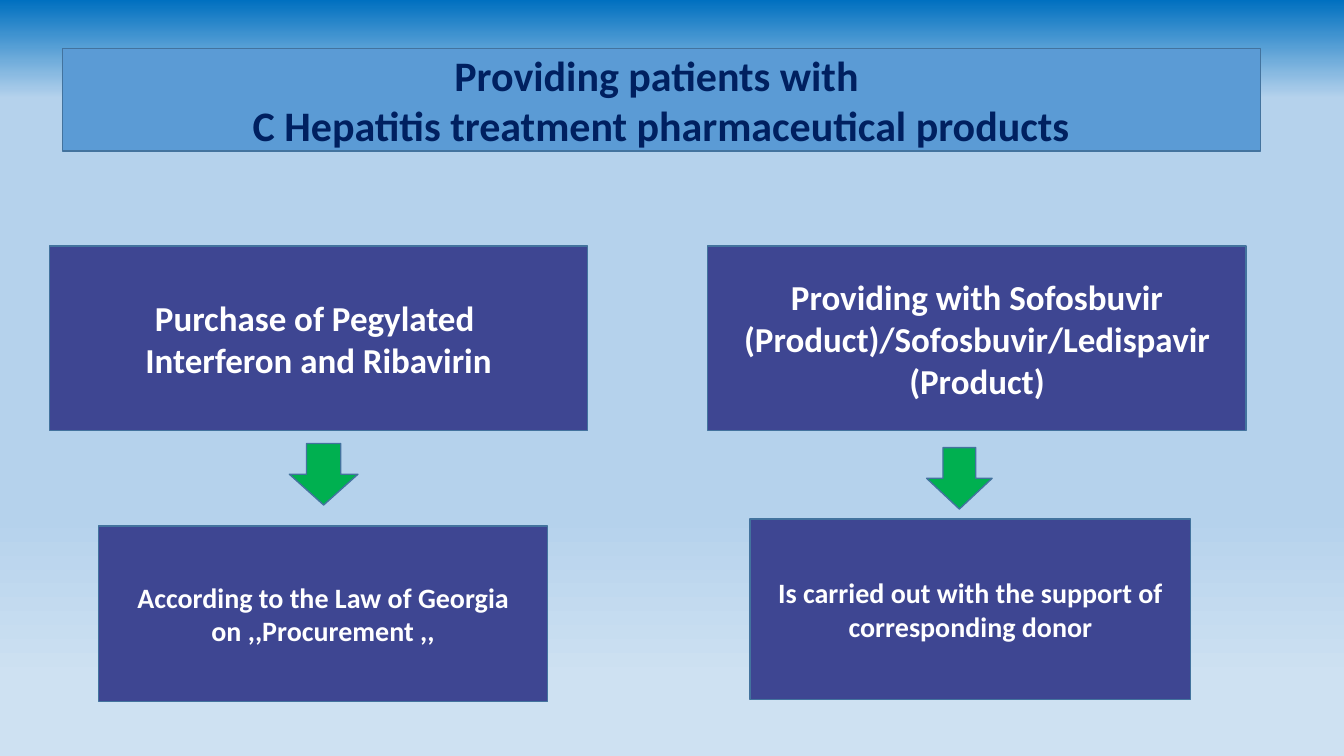
import copy
import pptx
import pptx.dml.color
import pptx.enum.shapes
import pptx.enum.text
import pptx.oxml.ns
import pptx.util

Inches, Pt = pptx.util.Inches, pptx.util.Pt
RGB = pptx.dml.color.RGBColor
SHAPE = pptx.enum.shapes.MSO_SHAPE

NAVY = RGB(0x00, 0x20, 0x60)
WHITE = RGB(0xFF, 0xFF, 0xFF)
INDIGO = RGB(0x3E, 0x46, 0x92)
GREEN = RGB(0x00, 0xB0, 0x50)
BLUE = RGB(0x5B, 0x9B, 0xD5)
EDGE = RGB(0x43, 0x73, 0x9E)
DEEP = RGB(0x00, 0x70, 0xC0)
SKY = RGB(0xB5, 0xD2, 0xEC)
PALE = RGB(0xCE, 0xE1, 0xF2)

# Content: text, size, place (left, top, width, height)
TITLE = "Providing patients with \nC Hepatitis treatment pharmaceutical products"
BANNER = (0.62, 0.48, 11.88, 1.02)
BOXES = [
    ("Purchase of Pegylated \nInterferon and Ribavirin", 25, (0.49, 2.44, 5.34, 1.83)),
    ("Providing with Sofosbuvir (Product)/Sofosbuvir/Ledispavir (Product)", 25,
     (7.02, 2.44, 5.34, 1.83)),
    ("According to the Law of Georgia on ,,Procurement ,,", 20, (0.98, 5.22, 4.45, 1.74)),
    ("Is carried out with the support of\ncorresponding donor", 20,
     (7.44, 5.15, 4.37, 1.79)),
]
ARROWS = [(2.87, 4.4, 0.68, 0.61), (9.19, 4.44, 0.65, 0.61)]
STOPS = [(0, DEEP), (0.13, SKY), (0.52, SKY), (0.68, SKY), (0.9, PALE)]


def paint(shape, fill):
    shape.fill.solid()
    shape.fill.fore_color.rgb = fill
    shape.line.color.rgb = EDGE
    shape.line.width = Pt(1)


def write(shape, text, size, color):
    frame = shape.text_frame
    frame.text = text
    frame.word_wrap = True
    frame.auto_size = pptx.enum.text.MSO_AUTO_SIZE.NONE
    frame.vertical_anchor = pptx.enum.text.MSO_ANCHOR.MIDDLE
    for para in frame.paragraphs:
        para.alignment = pptx.enum.text.PP_ALIGN.CENTER
        for run in para.runs:
            run.font.name = "Calibri"
            run.font.size = Pt(size)
            run.font.bold = True
            run.font.color.rgb = color


def draw(slide, kind, place, fill):
    shape = slide.shapes.add_shape(kind, *map(Inches, place))
    shape.shadow.inherit = False
    paint(shape, fill)
    return shape


def shade(slide):
    fill = slide.background.fill
    fill.gradient()
    fill.gradient_angle = 270
    group = slide.element.find(".//" + pptx.oxml.ns.qn("a:gsLst"))
    while len(group) < len(STOPS):
        group.append(copy.deepcopy(group[0]))
    for stop, (place, color) in zip(fill.gradient_stops, STOPS):
        stop.position = place
        stop.color.rgb = color


def main():
    deck = pptx.Presentation()
    deck.slide_width, deck.slide_height = Inches(13.33), Inches(7.5)
    slide = deck.slides.add_slide(deck.slide_layouts[5])
    shade(slide)

    # Title banner
    title = slide.shapes.title
    title.left, title.top, title.width, title.height = map(Inches, BANNER)
    paint(title, BLUE)
    write(title, TITLE, 30, NAVY)

    # Boxes and the arrows between them
    for text, size, place in BOXES:
        write(draw(slide, SHAPE.RECTANGLE, place, INDIGO), text, size, WHITE)
    for place in ARROWS:
        draw(slide, SHAPE.DOWN_ARROW, place, GREEN)

    deck.save("out.pptx")


if __name__ == "__main__":
    main()
